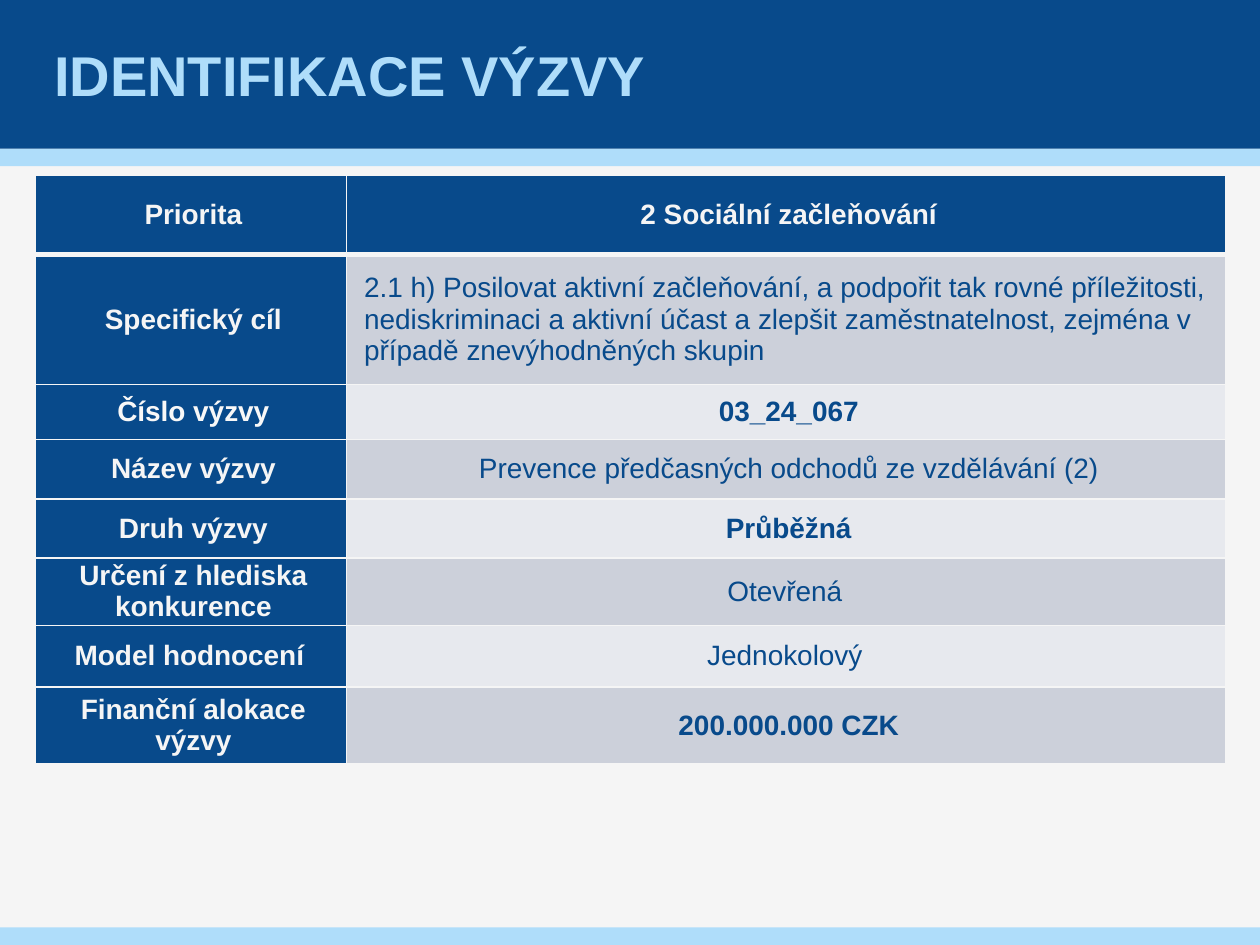
from lxml.etree import SubElement
from pptx import Presentation
from pptx.dml.color import RGBColor
from pptx.enum.shapes import MSO_SHAPE
from pptx.enum.text import MSO_ANCHOR, PP_ALIGN
from pptx.oxml.ns import qn
from pptx.util import Inches, Pt

NAVY = RGBColor(0x08, 0x4A, 0x8B)
SKY = RGBColor(0xAF, 0xDD, 0xFA)
PAPER = RGBColor(0xF5, 0xF5, 0xF5)
OFF_WHITE = RGBColor(0xF8, 0xF8, 0xF8)
BAND_DARK = RGBColor(0xCC, 0xD0, 0xDA)
BAND_LIGHT = RGBColor(0xE7, 0xE9, 0xEE)
FONT = "Arial"

TITLE = "IDENTIFIKACE VÝZVY"
# label, value, value is bold, row height
ROWS = [
    ("Priorita", "2 Sociální začleňování", True, 0.63),
    ("Specifický cíl",
     "2.1 h) Posilovat aktivní začleňování, a podpořit tak rovné příležitosti, "
     "nediskriminaci a aktivní účast a zlepšit zaměstnatelnost, zejména v "
     "případě znevýhodněných skupin", False, 1.03),
    ("Číslo výzvy", "03_24_067", True, 0.44),
    ("Název výzvy", "Prevence předčasných odchodů ze vzdělávání (2)", False, 0.47),
    ("Druh výzvy", "Průběžná", True, 0.47),
    ("Určení z hlediska konkurence", "Otevřená ", False, 0.5),
    ("Model hodnocení ", "Jednokolový ", False, 0.49),
    ("Finanční alokace výzvy", "200.000.000 CZK", True, 0.61),
]
COLUMN_WIDTHS = (2.47, 6.98)
BANDS = [(1.18, 0.14, SKY), (0, 1.18, NAVY), (7.36, 0.14, SKY)]  # top, height, colour


def set_font(paragraph, size, color, bold):
    font = paragraph.font
    font.name, font.size, font.bold = FONT, Pt(size), bold
    font.color.rgb = color


def add_borders(cell, bottom):
    """Draw paper-coloured cell edges; they must precede the fill in tcPr."""
    properties = cell._tc.get_or_add_tcPr()
    for edge, width in (("L", 1), ("R", 1), ("T", 1), ("B", bottom)):
        line = SubElement(properties, qn(f"a:ln{edge}"), w=str(Pt(width)))
        fill = SubElement(line, qn("a:solidFill"))
        SubElement(fill, qn("a:srgbClr"), val=str(PAPER))


def fill_cell(cell, text, color, bold, fill, bottom, inset=0, align=PP_ALIGN.CENTER):
    add_borders(cell, bottom)
    cell.fill.solid()
    cell.fill.fore_color.rgb = fill
    cell.vertical_anchor = MSO_ANCHOR.MIDDLE
    cell.margin_left = cell.margin_right = Inches(inset)
    cell.margin_top = cell.margin_bottom = 0
    cell.text = text
    paragraph = cell.text_frame.paragraphs[0]
    paragraph.alignment = align
    paragraph.space_before = paragraph.space_after = Pt(3)
    paragraph._p.get_or_add_pPr().set("marL", str(Inches(0.04)))
    set_font(paragraph, 16, color, bold)


prs = Presentation()
prs.slide_width, prs.slide_height = Inches(10), Inches(7.5)
slide = prs.slides.add_slide(prs.slide_layouts[6])
slide.background.fill.solid()
slide.background.fill.fore_color.rgb = PAPER

for top, height, color in BANDS:
    band = slide.shapes.add_shape(
        MSO_SHAPE.RECTANGLE, 0, Inches(top), prs.slide_width, Inches(height))
    band.shadow.inherit = False
    band.fill.solid()
    band.fill.fore_color.rgb = color
    band.line.fill.background()

title = slide.shapes.add_textbox(Inches(0.39), 0, Inches(9.21), Inches(1.18)).text_frame
title.word_wrap = True
title.vertical_anchor = MSO_ANCHOR.MIDDLE
title.margin_left = title.margin_right = Inches(0.04)
title.margin_top = title.margin_bottom = 0
title.text = TITLE
set_font(title.paragraphs[0], 32, SKY, True)

table = slide.shapes.add_table(
    len(ROWS), len(COLUMN_WIDTHS), Inches(0.28), Inches(1.39),
    Inches(sum(COLUMN_WIDTHS)), Inches(sum(row[-1] for row in ROWS))).table
for column, width in zip(table.columns, COLUMN_WIDTHS):
    column.width = Inches(width)

for index, (label, value, bold, height) in enumerate(ROWS):
    table.rows[index].height = Inches(height)
    is_header = index == 0
    bottom = 3 if is_header else 1
    label_color = OFF_WHITE if label == "Číslo výzvy" else PAPER
    fill_cell(table.cell(index, 0), label, label_color, True, NAVY, bottom)
    if is_header:
        value_color, value_fill = PAPER, NAVY
    else:
        value_color, value_fill = NAVY, BAND_DARK if index % 2 else BAND_LIGHT
    is_long = label == "Specifický cíl"
    fill_cell(table.cell(index, 1), value, value_color, bold, value_fill, bottom,
              inset=0.1 if is_long else 0,
              align=PP_ALIGN.LEFT if is_long else PP_ALIGN.CENTER)

prs.save("out.pptx")
